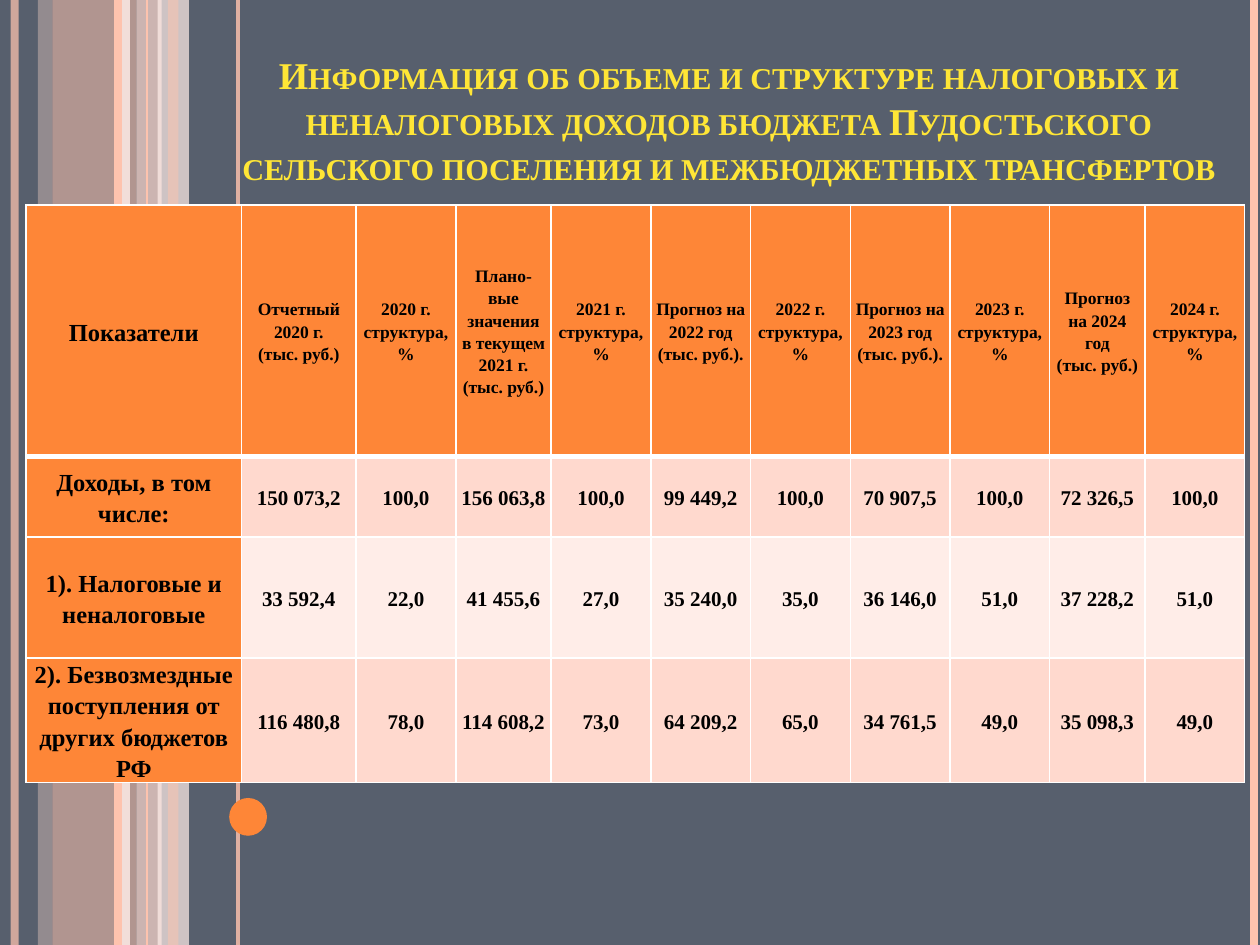
"""Builds the slide on the structure of budget revenues and transfers."""
from copy import deepcopy
from dataclasses import dataclass

from lxml.etree import SubElement
from pptx import Presentation
from pptx.dml.color import RGBColor
from pptx.enum.shapes import MSO_CONNECTOR as Connector, MSO_SHAPE as Shape
from pptx.enum.text import MSO_ANCHOR as Anchor, MSO_AUTO_SIZE as AutoSize, PP_ALIGN as Align
from pptx.oxml.ns import qn
from pptx.util import Pt


@dataclass(frozen=True)
class Theme:
    back: str = "575F6D"
    accent: str = "FE8637"
    pink: str = "FEC3AE"
    light: str = "FFD9CE"
    pale: str = "FFEDE8"
    title: str = "FFE636"
    text: str = "000000"
    border: str = "FFFFFF"
    font: str = "Times New Roman"
    title_size: float = 21.6
    label_size: float = 14
    value_size: float = 12
    head_size: float = 10


class Builder:
    def __init__(self, prs, theme):
        self.prs, self.theme = prs, theme
        self.s = prs.slides.add_slide(prs.slide_layouts[5])
        self.paint(self.s.background.fill, theme.back)

    def paint(self, fill, color, alpha=100):
        fill.solid()
        fill.fore_color.rgb = RGBColor.from_string(color)
        if alpha < 100:
            clr = next(fill._xPr.iter(qn("a:srgbClr")))
            SubElement(clr, qn("a:alpha")).set("val", str(alpha * 1000))

    def format(self, p, size, color):
        p.alignment = Align.CENTER
        for r in p.runs:
            r.font.name, r.font.size, r.font.bold = self.theme.font, Pt(size), True
            r.font.color.rgb = RGBColor.from_string(color)
        for br in p._p.findall(qn("a:br")):
            br.insert(0, deepcopy(p.runs[0]._r.rPr))

    def shape(self, kind, x, y, w, h, color, alpha=100):
        sp = self.s.shapes.add_shape(kind, Pt(x), Pt(y), Pt(w), Pt(h))
        sp.shadow.inherit = False
        sp.line.fill.background()
        self.paint(sp.fill, color, alpha)

    def band(self, x, w, color, alpha):
        self.shape(Shape.RECTANGLE, x, 0, w, self.prs.slide_height.pt, color, alpha)

    def stripe(self, x, width, color, alpha=100):
        line = self.s.shapes.add_connector(
            Connector.STRAIGHT, Pt(x), 0, Pt(x), self.prs.slide_height)
        self.paint(line.line.fill, color, alpha)
        line.line.width = Pt(width)
        SubElement(line._element.spPr, qn("a:effectLst"))

    def title(self, text, x, y, w, h):
        sp = self.s.shapes.title
        sp.left, sp.top, sp.width, sp.height = Pt(x), Pt(y), Pt(w), Pt(h)
        tf = sp.text_frame
        tf.text = text
        tf.word_wrap, tf.auto_size = True, AutoSize.NONE
        tf.vertical_anchor = Anchor.BOTTOM
        self.format(tf.paragraphs[0], self.theme.title_size, self.theme.title)
        tf.paragraphs[0].runs[0]._r.rPr.set("cap", "small")
        self.s.shapes._spTree.append(sp._element)

    def borders(self, cell, **widths):
        tc_pr = cell._tc.get_or_add_tcPr()
        for i, side in enumerate("LRTB"):
            ln = tc_pr.makeelement(qn(f"a:ln{side}"), {"w": str(Pt(widths.get(side, 1)))})
            fill = SubElement(ln, qn("a:solidFill"))
            SubElement(fill, qn("a:srgbClr")).set("val", self.theme.border)
            tc_pr.insert(i, ln)

    def cell(self, cell, text, size, color):
        cell.text_frame.text = text
        cell.margin_left = cell.margin_right = Pt(3)
        cell.margin_top = cell.margin_bottom = 0
        cell.vertical_anchor = Anchor.MIDDLE
        p = cell.text_frame.paragraphs[0]
        p.line_spacing = 1.15
        self.format(p, size, self.theme.text)
        self.paint(cell.fill, color)

    def table(self, rows, x, y, widths, heights):
        t = self.theme
        tbl = self.s.shapes.add_table(
            len(rows), len(widths), Pt(x), Pt(y), Pt(sum(widths)), Pt(sum(heights))).table
        for col, w in zip(tbl.columns, widths):
            col.width = Pt(w)
        for i, (row, h) in enumerate(zip(rows, heights)):
            tbl.rows[i].height = Pt(h)
            for j, text in enumerate(row):
                size = t.label_size if j == 0 else t.value_size if i else t.head_size
                color = t.accent if i == 0 or j == 0 else t.light if i % 2 else t.pale
                cell = tbl.cell(i, j)
                self.cell(cell, text, size, color)
                self.borders(cell, T=3 if i == 1 else 1, B=3 if i == 0 else 1)
        tbl.cell(len(rows) - 1, 0).vertical_anchor = Anchor.BOTTOM


TITLE = ("Информация об объеме и структуре налоговых и неналоговых доходов бюджета "
         "Пудостьского сельского поселения и межбюджетных трансфертов")

AMOUNT_HEADS = {
    2020: "Отчетный 2020 г.\v(тыс. руб.)",
    2021: "Плано-вые значения в текущем 2021 г. (тыс. руб.)",
    2022: "Прогноз на 2022 год (тыс. руб.).",
    2023: "Прогноз на 2023 год\v(тыс. руб.).",
    2024: "Прогноз на 2024 год\v(тыс. руб.)",
}

REVENUES = [
    ["Доходы, в том числе:", "150 073,2", "100,0", "156 063,8", "100,0", "99 449,2", "100,0",
     "70 907,5", "100,0", "72 326,5", "100,0"],
    ["1). Налоговые и неналоговые", "33 592,4", "22,0", "41 455,6", "27,0", "35 240,0", "35,0",
     "36 146,0", "51,0", "37 228,2", "51,0"],
    ["2). Безвозмездные поступления от других бюджетов РФ", "116 480,8", "78,0", "114 608,2",
     "73,0", "64 209,2", "65,0", "34 761,5", "49,0", "35 098,3", "49,0"],
]


def main():
    prs = Presentation()
    prs.slide_width, prs.slide_height = Pt(720), Pt(540)
    t = Theme()
    b = Builder(prs, t)

    for band in [(30, 48, t.pink, 54), (21.6, 8.4, t.light, 36),
                 (78, 14.4, t.light, 70), (90, 18, t.pale, 71)]:
        b.band(*band)
    for stripe in [(8.4, 4.5, t.pink, 73), (72, 4.5, t.pale, 83), (67.2, 4.5, t.pink),
                   (136, 2.25, t.pink, 82), (84, 0.75, t.pink), (716.4, 4.5, t.pink)]:
        b.stripe(*stripe)
    b.band(96, 6, t.pink, 51)
    b.shape(Shape.OVAL, 131, 456, 21.6, 21.6, t.accent)

    b.title(TITLE, 122, 31.5, 589, 79.5)
    header = ["Показатели"]
    for year, amount in AMOUNT_HEADS.items():
        header += [amount, f"{year} г. структура, %"]
    widths = [123, 65.5, 57, 54.5] + [57] * 5 + [54.5, 57]
    b.table([header] + REVENUES, 15, 117, widths, [144, 46, 69, 69])
    prs.save("out.pptx")


if __name__ == "__main__":
    main()
